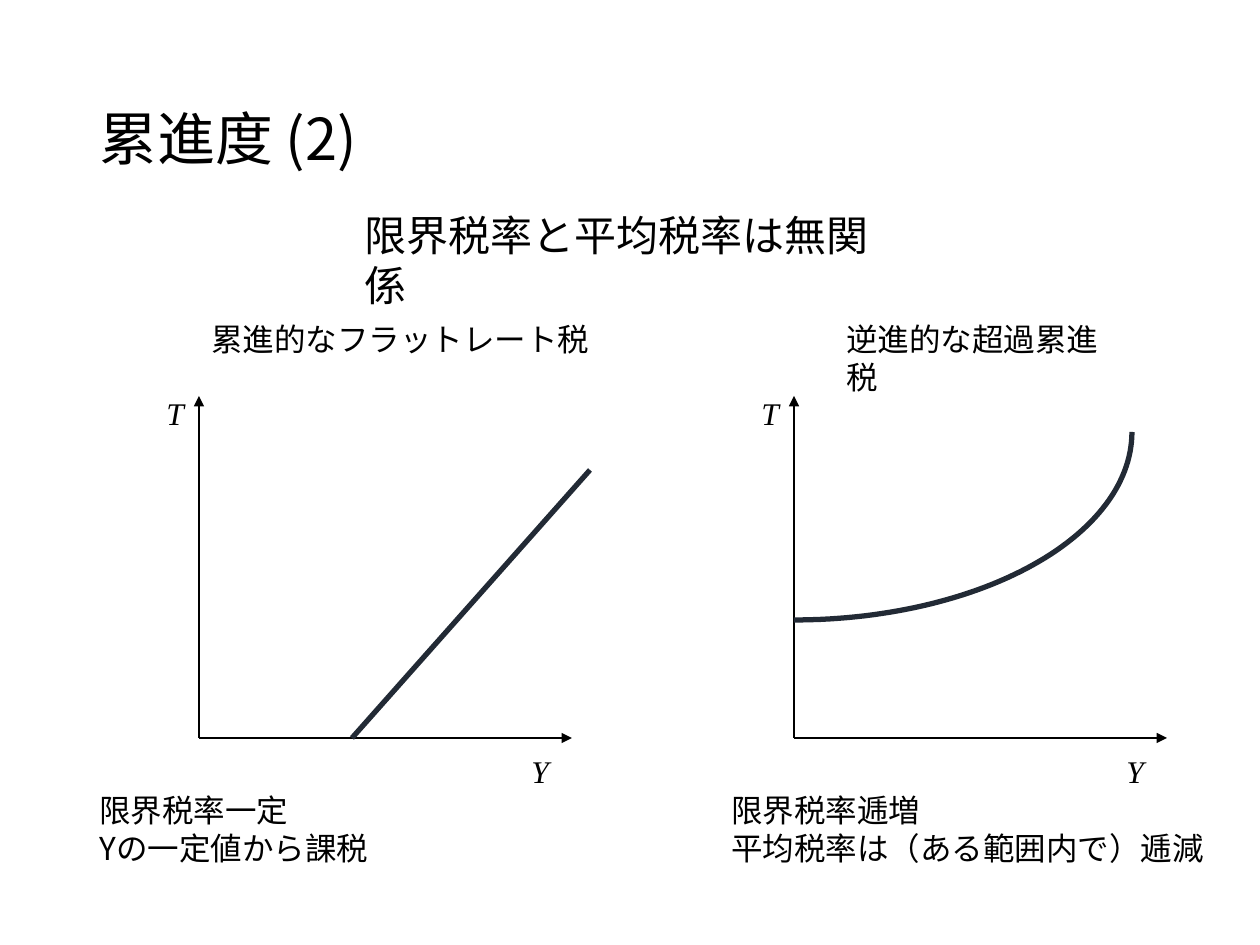
"""Build the slide on tax progressivity with two tax schedule diagrams."""
import math

import pptx
import pptx.dml.color
import pptx.enum.shapes
import pptx.enum.text
import pptx.oxml.ns
import pptx.util
from lxml import etree

PX = 914400 / 126
BLACK = pptx.dml.color.RGBColor(0x00, 0x00, 0x00)
NAVY = pptx.dml.color.RGBColor(0x22, 0x2A, 0x35)
SANS = "Noto Sans CJK JP"
SERIF = "Times New Roman"
qn = pptx.oxml.ns.qn


def set_text(sp, box, text, size, font=SANS, italic=False):
    sp.left, sp.top, sp.width, sp.height = [round(v * PX) for v in box]
    tf = sp.text_frame
    tf.text = text
    tf.word_wrap = True
    tf.auto_size = pptx.enum.text.MSO_AUTO_SIZE.NONE
    for p in tf.paragraphs:
        p.alignment = pptx.enum.text.PP_ALIGN.LEFT
        for r in p.runs:
            r.font.size = pptx.util.Pt(size)
            r.font.name = font
            r.font.italic = italic
            r.font.color.rgb = BLACK
            etree.SubElement(r.font._element, qn("a:ea"), typeface=font)


def add_line(x1, y1, x2, y2, color, width, arrow=False):
    ends = [round(v * PX) for v in (x1, y1, x2, y2)]
    line = s.shapes.add_connector(pptx.enum.shapes.MSO_CONNECTOR.STRAIGHT, *ends)
    line.line.color.rgb = color
    line.line.width = pptx.util.Pt(width)
    if arrow:
        etree.SubElement(line.line._get_or_add_ln(), qn("a:tailEnd"), type="triangle")
    etree.SubElement(line._element.spPr, qn("a:effectLst"))


prs = pptx.Presentation()
prs.slide_width = round(1260 * PX)
prs.slide_height = round(945 * PX)
s = prs.slides.add_slide(prs.slide_layouts[5])

title = s.shapes.title
set_text(title, (87, 50, 1086, 183), "累進度 (2)", 33)
title.text_frame.vertical_anchor = pptx.enum.text.MSO_ANCHOR.MIDDLE
title.text_frame.paragraphs[0].line_spacing = 0.9

BASE = 738
LEFT_X, RIGHT_X = 199, 794
for x in (RIGHT_X, LEFT_X):
    add_line(x, BASE, x + 373, BASE, BLACK, 0.75, arrow=True)
    add_line(x, BASE, x, 396, BLACK, 0.75, arrow=True)
    for name, dx, y in (("Y", 320, 746), ("T", -45, 388)):
        sp = s.shapes.add_textbox(0, 0, 0, 0)
        set_text(sp, (x + dx, y, 44, 50), name, 18, SERIF, italic=True)

add_line(352, BASE, 590, 470, NAVY, 3)

CURVE_TOP, CURVE_W, CURVE_H = 432, 338, 188
angles = [math.pi / 2 * (1 - i / 60) for i in range(61)]
points = [
    (round((RIGHT_X + CURVE_W * math.cos(a)) * PX), round((CURVE_TOP + CURVE_H * math.sin(a)) * PX))
    for a in angles
]
fb = s.shapes.build_freeform(*points[0])
fb.add_line_segments(points[1:], close=False)
curve = fb.convert_to_shape()
curve.shadow.inherit = False
curve.fill.background()
curve.line.color.rgb = NAVY
curve.line.width = pptx.util.Pt(3)

captions = [
    ((199, 314, 411, 50), "累進的なフラットレート税", 18),
    ((834, 314, 306, 50), "逆進的な超過累進税", 18),
    ((87, 785, 553, 89), "限界税率一定\nYの一定値から課税", 18),
    ((719, 785, 528, 89), "限界税率逓増\n平均税率は（ある範囲内で）逓減", 18),
    ((352, 203, 567, 63), "限界税率と平均税率は無関係", 24),
]
for box, text, size in captions:
    set_text(s.shapes.add_textbox(0, 0, 0, 0), box, text, size)

prs.save("out.pptx")
